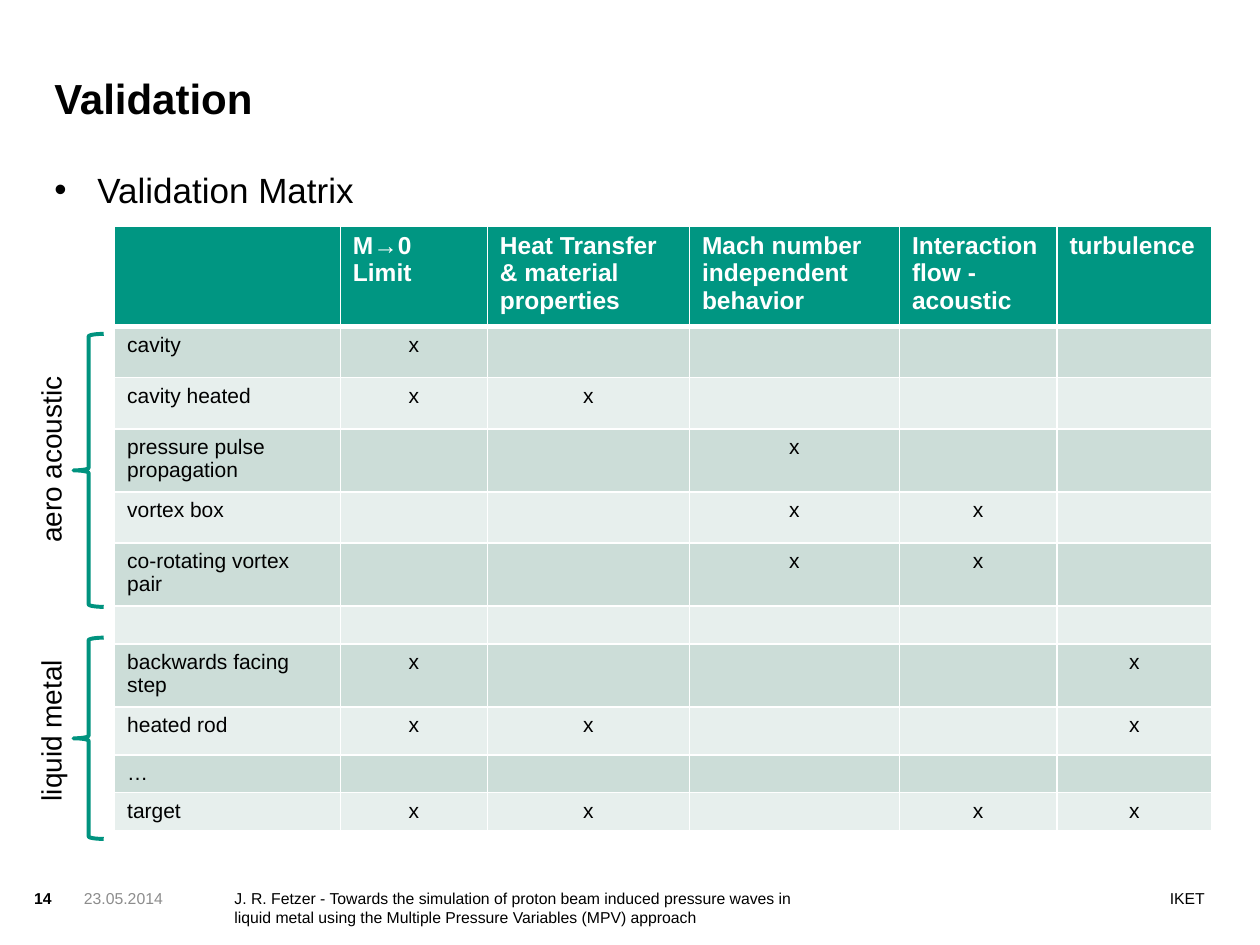
from dataclasses import dataclass

from lxml.etree import SubElement
from pptx import Presentation
from pptx.dml.color import RGBColor
from pptx.enum.shapes import MSO_SHAPE as Shape
from pptx.enum.text import MSO_ANCHOR as Anchor, PP_ALIGN as Align
from pptx.oxml.ns import qn
from pptx.util import Pt


@dataclass(frozen=True)
class Theme:
    font: str = "Arial"
    text: str = "000000"
    muted: str = "8C8C8C"
    white: str = "FFFFFF"
    header: str = "009682"
    brace: str = "00937F"
    bands: tuple = ("CCDDD8", "E7EFED")
    title_size: int = 24
    body_size: int = 20
    label_size: int = 16
    header_size: int = 14
    cell_size: int = 12
    footer_size: int = 9


THEME = Theme()

COLUMNS = [("", 129), ("M→0 Limit", 84), ("Heat Transfer & material properties", 115.5),
           ("Mach number independent behavior", 120), ("Interaction flow - acoustic", 90),
           ("turbulence", 88.5)]
HEADER_HEIGHT = 54.3
# Test case, row height, marked columns
CASES = [("cavity", 29.2, {1}), ("cavity heated", 29.2, {1, 2}),
         ("pressure pulse propagation", 34.2, {3}), ("vortex box", 29.2, {3, 4}),
         ("co-rotating vortex pair", 34.2, {3, 4}), ("", 20.6, set()),
         ("backwards facing step", 34.2, {1, 5}), ("heated rod", 27.4, {1, 2, 5}),
         ("…", 20.6, set()), ("target", 20.6, {1, 2, 4, 5})]


def style(paragraph, size, color=THEME.text, bold=False, align=Align.LEFT):
    paragraph.alignment = align
    font = paragraph.font
    font.name, font.size, font.bold = THEME.font, Pt(size), bold
    font.color.rgb = RGBColor.from_string(color)


def add_text(shapes, box, text, size, anchor=Anchor.TOP, inset=0, wrap=True, bullet=None, **look):
    shape = shapes.add_textbox(*map(Pt, box))
    frame = shape.text_frame
    frame.word_wrap, frame.vertical_anchor = wrap, anchor
    frame.margin_left = frame.margin_right = Pt(2 * inset)
    frame.margin_top = frame.margin_bottom = Pt(inset)
    paragraph = frame.paragraphs[0]
    paragraph.text = text
    if bullet:
        properties = paragraph._p.get_or_add_pPr()
        properties.set("marL", str(Pt(24.6)))
        properties.set("indent", str(-Pt(24.6)))
        SubElement(properties, qn("a:buFont"), typeface=THEME.font)
        SubElement(properties, qn("a:buChar"), char=bullet)
    style(paragraph, size, **look)
    return shape


def add_borders(cell, bottom=1, top=1):
    properties = cell._tc.get_or_add_tcPr()
    for side, width in (("L", 1), ("R", 1), ("T", top), ("B", bottom)):
        line = SubElement(properties, qn(f"a:ln{side}"), w=str(Pt(width)))
        fill = SubElement(line, qn("a:solidFill"))
        SubElement(fill, qn("a:srgbClr"), val=THEME.white)


def fill_cell(cell, text, fill, size, **look):
    paragraph = cell.text_frame.paragraphs[0]
    paragraph.text = text
    style(paragraph, size, **look)
    if not text:  # keeps empty cells from stretching their row
        SubElement(paragraph._p, qn("a:endParaRPr"), sz=str(size * 100))
    cell.fill.solid()
    cell.fill.fore_color.rgb = RGBColor.from_string(fill)


def add_matrix(slide, left, top):
    heights = [HEADER_HEIGHT] + [height for _, height, _ in CASES]
    widths = [width for _, width in COLUMNS]
    table = slide.shapes.add_table(len(heights), len(widths), Pt(left), Pt(top),
                                   Pt(sum(widths)), Pt(sum(heights))).table
    for column, width in zip(table.columns, widths):
        column.width = Pt(width)
    for row, height in zip(table.rows, heights):
        row.height = Pt(height)

    # Header row
    for index, (heading, _) in enumerate(COLUMNS):
        cell = table.cell(0, index)
        add_borders(cell, bottom=3)
        fill_cell(cell, heading, THEME.header, THEME.header_size, color=THEME.white, bold=True)

    # Test cases
    for row, (case, _, marks) in enumerate(CASES, start=1):
        for column in range(len(COLUMNS)):
            cell = table.cell(row, column)
            add_borders(cell, top=3 if row == 1 else 1)
            text = case if column == 0 else "x" if column in marks else ""
            fill_cell(cell, text, THEME.bands[(row - 1) % 2], THEME.cell_size,
                      align=Align.CENTER if column else Align.LEFT)


def add_brace_label(slide, left, top, height, label, label_center, label_width):
    shapes = slide.shapes.add_group_shape().shapes
    brace = shapes.add_shape(Shape.LEFT_BRACE, Pt(left), Pt(top), Pt(17.3), Pt(height))
    brace.shadow.inherit = False
    brace.fill.background()
    brace.line.color.rgb = RGBColor.from_string(THEME.brace)
    brace.line.width = Pt(2.25)
    center_x, label_height = left - 13, 26.6
    box = (center_x - label_width / 2, label_center - label_height / 2, label_width, label_height)
    text = add_text(shapes, box, label, THEME.label_size, inset=3.6, wrap=False)
    text.rotation = 270


def add_heading(slide, left, top, width):
    add_text(slide.shapes, (left, top, width, 44), "Validation", THEME.title_size,
             anchor=Anchor.BOTTOM, bold=True)
    add_text(slide.shapes, (left, top + 70, 658, 384), "Validation Matrix", THEME.body_size,
             bullet="•")


def add_footer(slide, top):
    parts = [(19.5, 26, "14", {"bold": True}),
             (48, 82, "23.05.2014", {"color": THEME.muted}),
             (134, 335, "J. R. Fetzer - Towards the simulation of proton beam induced pressure "
              "waves in liquid metal using the Multiple Pressure Variables (MPV) approach", {}),
             (473, 215.5, "IKET", {"align": Align.RIGHT})]
    for left, width, text, look in parts:
        add_text(slide.shapes, (left, top, width, 28), text, THEME.footer_size, **look)


def main():
    presentation = Presentation()
    presentation.slide_width, presentation.slide_height = Pt(720), Pt(540)
    slide = presentation.slides.add_slide(presentation.slide_layouts[6])
    add_heading(slide, 31, 26, 544)
    add_matrix(slide, 65.5, 129)
    add_brace_label(slide, 42, 190.8, 156, "aero acoustic", 261.7, 111)
    add_brace_label(slide, 42, 364.4, 115, "liquid metal", 417, 96)
    add_footer(slide, 507.8)
    presentation.save("out.pptx")


if __name__ == "__main__":
    main()
